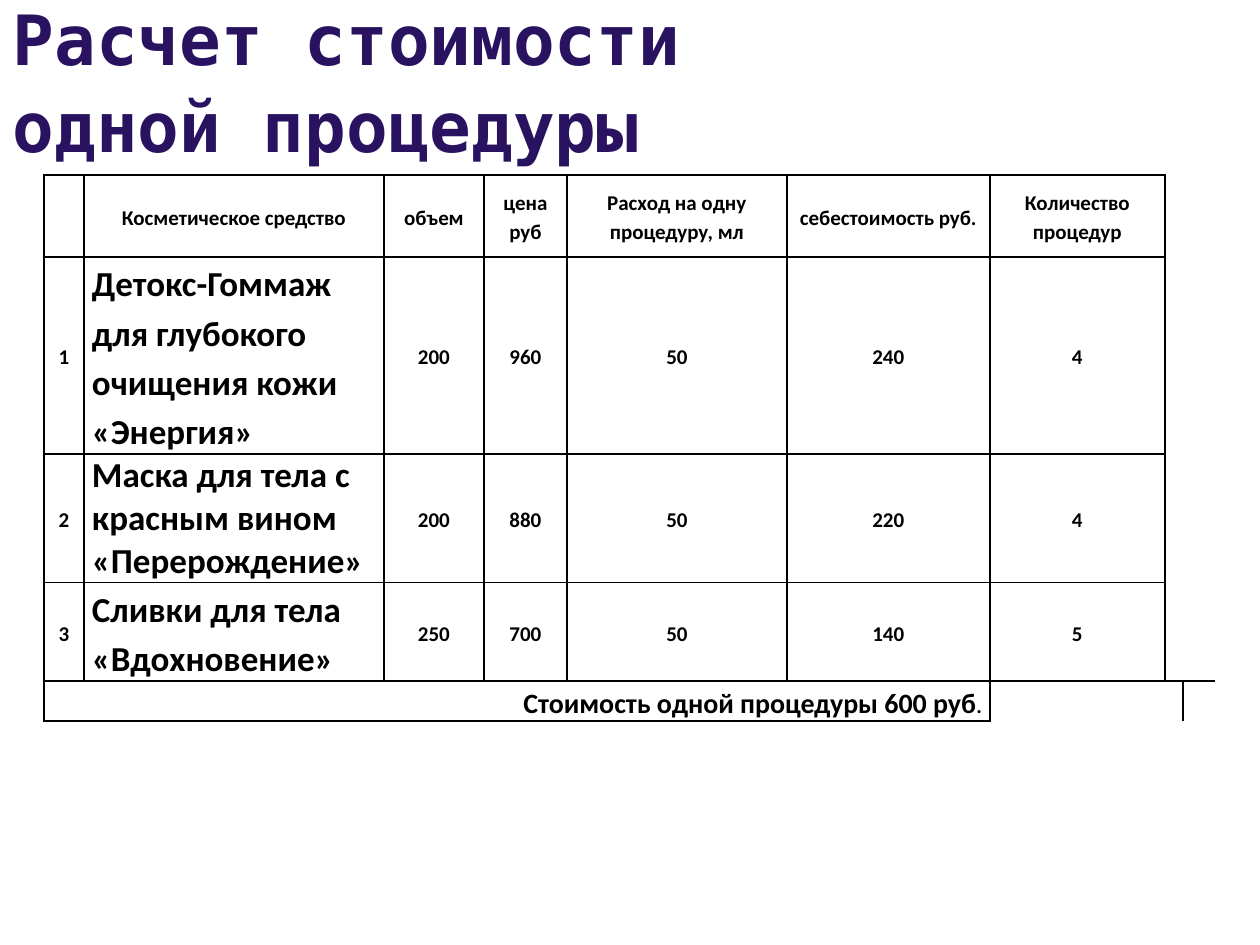
from dataclasses import dataclass

from lxml.etree import SubElement
from pptx import Presentation
from pptx.dml.color import RGBColor
from pptx.enum.text import MSO_ANCHOR, MSO_AUTO_SIZE, PP_ALIGN
from pptx.oxml.ns import qn
from pptx.util import Pt

PX = 914400 // 126
NO_STYLE = "{2D5ABB26-0587-4C30-8999-92F81FD0307C}"
SIDES = "LRTB"


@dataclass(frozen=True)
class Theme:
    """Colours, fonts and type sizes of the slide."""
    ink: str = "000000"
    accent: str = "291361"
    title_font: str = "DejaVu Sans Mono"
    body_font: str = "Calibri"
    title: float = 39.6
    product: int = 20
    total: int = 16
    small: int = 12


class Deck:
    """Holds the theme and the current slide."""

    def __init__(self, prs, theme):
        """Add a title-only slide to the presentation."""
        self.theme = theme
        self.slide = prs.slides.add_slide(prs.slide_layouts[5])

    def run(self, p, text, size, color, font):
        """Add a bold run to a paragraph."""
        r = p.add_run()
        r.text = text
        r.font.color.rgb = RGBColor.from_string(color)
        for name, value in {"size": Pt(size), "name": font, "bold": True}.items():
            setattr(r.font, name, value)

    def title(self, text, x, y, w, h):
        """Fill and place the title placeholder."""
        s = self.slide.shapes.title
        for name, value in {"left": x, "top": y, "width": w, "height": h}.items():
            setattr(s, name, value * PX)
        tf = s.text_frame
        for name, value in {"word_wrap": True, "auto_size": MSO_AUTO_SIZE.NONE,
                            "vertical_anchor": MSO_ANCHOR.MIDDLE}.items():
            setattr(tf, name, value)
        p = tf.paragraphs[0]
        p.alignment, p.line_spacing = PP_ALIGN.LEFT, 1.05
        t = self.theme
        self.run(p, text, t.title, t.accent, t.title_font)

    def table(self, x, y, widths, heights):
        """Add a plain table with unfilled cells and narrow margins."""
        frame = self.slide.shapes.add_table(
            len(heights), len(widths), x * PX, y * PX, sum(widths) * PX, sum(heights) * PX)
        tbl = frame.table
        tbl.first_row = tbl.horz_banding = False
        frame._element.find(f".//{qn('a:tableStyleId')}").text = NO_STYLE
        for col, w in zip(tbl.columns, widths):
            col.width = w * PX
        for row, h in zip(tbl.rows, heights):
            row.height = h * PX
        for cell in tbl.iter_cells():
            for name, value in {"margin_left": 8 * PX, "margin_right": 8 * PX,
                                "margin_top": 0, "margin_bottom": 0,
                                "vertical_anchor": MSO_ANCHOR.MIDDLE}.items():
                setattr(cell, name, value)
            cell.fill.background()
        return tbl

    def borders(self, cell, sides=SIDES):
        """Draw thin lines on the named sides of a cell."""
        tcPr = cell._tc.get_or_add_tcPr()
        for i, side in enumerate(sides):
            ln = SubElement(tcPr, qn(f"a:ln{side}"), w=str(Pt(1)))
            fill = SubElement(ln, qn("a:solidFill"))
            SubElement(fill, qn("a:srgbClr"), val=self.theme.ink)
            tcPr.insert(i, ln)

    def text(self, cell, parts, align=PP_ALIGN.CENTER, spacing=1.15, after=0):
        """Write (text, size) runs in a cell."""
        p = cell.text_frame.paragraphs[0]
        for name, value in {"alignment": align, "line_spacing": spacing,
                            "space_after": Pt(after)}.items():
            setattr(p, name, value)
        for text, size in parts:
            self.run(p, text, size, self.theme.ink, self.theme.body_font)


def main():
    """Build the procedure cost slide."""
    prs = Presentation()
    prs.slide_width, prs.slide_height = 1260 * PX, 945 * PX
    t = Theme()
    deck = Deck(prs, t)
    deck.title("Расчет стоимости одной процедуры", 0, 0, 924, 158)

    rows = [
        ("", "Косметическое средство", "объем", "цена руб", "Расход на одну процедуру, мл",
         "себестоимость руб.", "Количество процедур"),
        ("1", "Детокс-Гоммаж для глубокого очищения кожи «Энергия»",
         "200", "960", "50", "240", "4"),
        ("2", "Маска для тела с красным вином «Перерождение»",
         "200", "880", "50", "220", "4"),
        ("3", "Сливки для тела «Вдохновение»", "250", "700", "50", "140", "5"),
    ]
    tbl = deck.table(44, 175, [40, 300, 100, 83, 220, 203, 175, 18, 32], [82] * 4 + [40])
    for i, row in enumerate(rows):
        for j, text in enumerate(row):
            cell = tbl.cell(i, j)
            deck.borders(cell)
            if i and j == 1:
                deck.text(cell, [(text, t.product)], PP_ALIGN.LEFT, 1.0 if i == 2 else 1.15)
            elif text:
                deck.text(cell, [(text, t.small)], after=10 if i == 2 and j > 1 else 0)
        tbl.cell(i, 7).merge(tbl.cell(i, 8))
        deck.borders(tbl.cell(i, 7), "L")

    total, rest = tbl.cell(4, 0), tbl.cell(4, 6)
    total.merge(tbl.cell(4, 5))
    rest.merge(tbl.cell(4, 7))
    deck.borders(total)
    deck.borders(rest, "LT")
    deck.text(total, [("Стоимость одной процедуры 600 руб", t.total), (".", t.small)],
              PP_ALIGN.RIGHT)
    prs.save("out.pptx")


if __name__ == "__main__":
    main()
